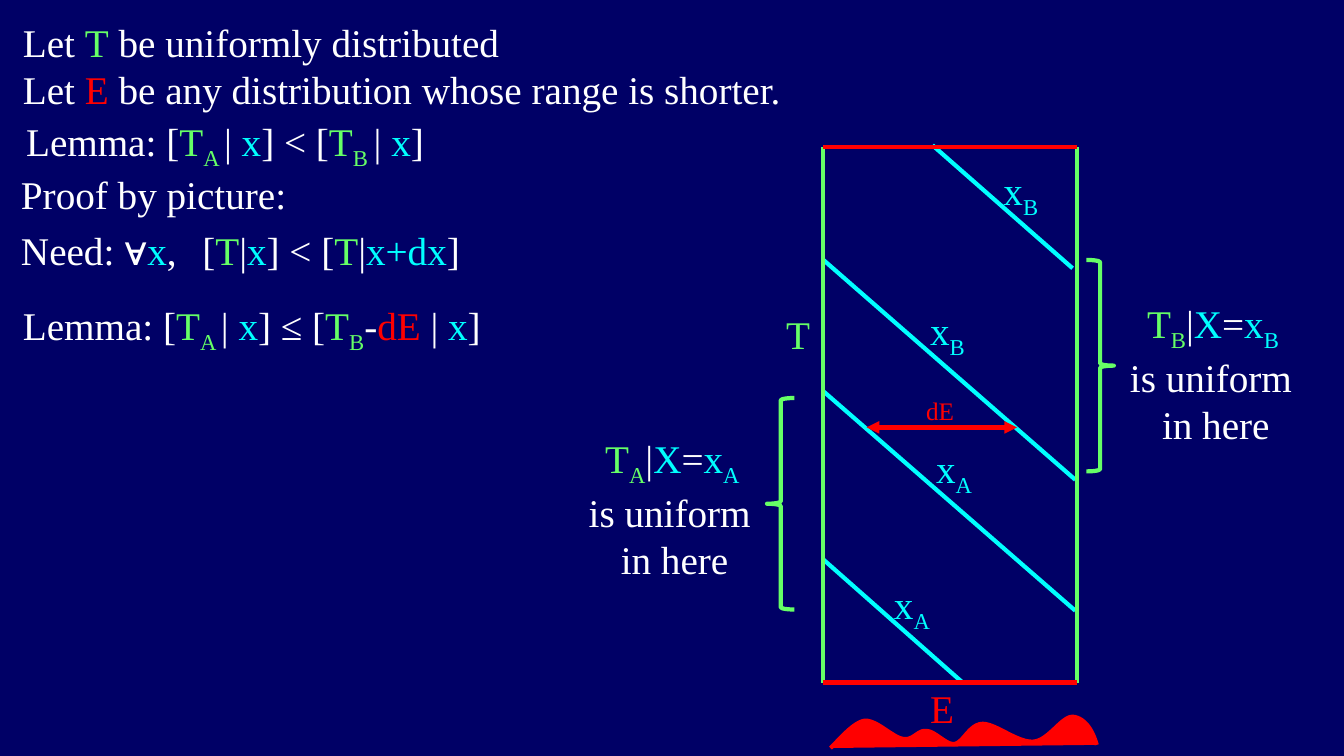
from lxml import etree
from pptx import Presentation
from pptx.dml.color import RGBColor
from pptx.enum.shapes import MSO_CONNECTOR, MSO_SHAPE
from pptx.enum.text import MSO_AUTO_SIZE, PP_ALIGN
from pptx.oxml.ns import qn
from pptx.util import Cm, Pt

WHITE, GREEN, CYAN, RED = "FFFFFF", "66FF66", "00FFFF", "FF0000"
# Marks used in text: {w} {g} {c} {r} set the colour, {_} starts a subscript
MARKS = {"w": WHITE, "g": GREEN, "c": CYAN, "r": RED}


def rgb(value):
    return RGBColor.from_string(value)


class Board:
    font = "Times New Roman"
    size = 28
    weight = 3

    def __init__(self, slide, back):
        self.s = slide
        fill = slide.background.fill
        fill.solid()
        fill.fore_color.rgb = rgb(back)

    def text(self, x, y, w, *lines, size=None, align=PP_ALIGN.LEFT, wrap=True, tab=None):
        size = size or self.size
        height = 0.26 + 1.19 * len(lines) * size / self.size
        tf = self.s.shapes.add_textbox(Cm(x), Cm(y), Cm(w), Cm(height)).text_frame
        tf.word_wrap = wrap
        tf.auto_size = MSO_AUTO_SIZE.SHAPE_TO_FIT_TEXT
        for i, line in enumerate(lines):
            p = tf.add_paragraph() if i else tf.paragraphs[0]
            p.alignment = align
            p.font.name, p.font.size = self.font, Pt(size)
            if tab:
                stops = etree.SubElement(p._p.get_or_add_pPr(), qn("a:tabLst"))
                p._p.pPr.insert(0, stops)
                etree.SubElement(stops, qn("a:tab"), pos=str(Cm(tab)), algn="l")
            self.runs(p, line)

    def runs(self, p, line):
        color = WHITE
        for part in line.split("{")[1:]:
            mark, words = part.split("}")
            color = MARKS.get(mark, color)
            r = p.add_run()
            r.text = words
            r.font.name, r.font.size = p.font.name, p.font.size
            r.font.color.rgb = rgb(color)
            if mark == "_":
                r.font._element.set("baseline", "-25000")

    def line(self, x1, y1, x2, y2, color, arrows=False):
        c = self.s.shapes.add_connector(MSO_CONNECTOR.STRAIGHT, Cm(x1), Cm(y1), Cm(x2), Cm(y2))
        self.outline(c, color)
        etree.SubElement(c._element.spPr, qn("a:effectLst"))
        if arrows:
            for end in ("a:headEnd", "a:tailEnd"):
                etree.SubElement(c.line._get_or_add_ln(), qn(end), type="triangle")

    def brace(self, kind, x, y, w, h, color):
        sp = self.s.shapes.add_shape(kind, Cm(x), Cm(y), Cm(w), Cm(h))
        sp.shadow.inherit = False
        sp.fill.background()
        self.outline(sp, color)

    def hills(self, start, curves, color, steps=12):
        points = []
        x0, y0 = start
        for x1, y1, x2, y2, x3, y3 in curves:
            for k in range(1, steps + 1):
                t = k / steps
                u = 1 - t
                a, b, c, d = u ** 3, 3 * u * u * t, 3 * u * t * t, t ** 3
                points.append((Cm(a * x0 + b * x1 + c * x2 + d * x3),
                               Cm(a * y0 + b * y1 + c * y2 + d * y3)))
            x0, y0 = x3, y3
        builder = self.s.shapes.build_freeform(Cm(start[0]), Cm(start[1]))
        builder.add_line_segments(points, close=False)
        sp = builder.convert_to_shape()
        sp.shadow.inherit = False
        sp.fill.solid()
        sp.fill.fore_color.rgb = rgb(color)
        self.outline(sp, color)

    def outline(self, shape, color):
        shape.line.color.rgb = rgb(color)
        shape.line.width = Pt(self.weight)


def main():
    prs = Presentation()
    prs.slide_width, prs.slide_height = Cm(33.87), Cm(19.05)
    board = Board(prs.slides.add_slide(prs.slide_layouts[6]), "000066")

    # Statements and proof steps
    board.text(0.33, 0.33, 20.78, "{w}Let {g}T{w} be uniformly distributed",
               "{w}Let {r}E{w} be any distribution whose range is shorter.")
    board.text(0.41, 2.84, 11.38, "{w}Lemma: [{g}T{_}A {w}| {c}x{w}] < [{g}T{_}B {w}| {c}x{w}]")
    board.text(0.28, 4.17, 8.66, "{w}Proof by picture:")
    board.text(0.28, 5.59, 27.56,
               "{w}Need: ∀{c}x{w},\t[{g}T{w}|{c}x{w}] < [{g}T{w}|{c}x+dx{w}]", tab=4.57)
    board.text(0.33, 7.47, 12.95,
               "{w}Lemma: [{g}T{_}A {w}| {c}x{w}] ≤ [{g}T{_}B{w}-{r}dE {w}| {c}x{w}]")

    # Diagonals of constant x
    left, right, top, bottom = 20.75, 27.15, 3.71, 17.2
    for ends in ((left, 9.86, 27.1, 15.39), (left, 6.55, 27.1, 12.09),
                 (23.5, 3.66, 27.03, 6.76), (left, 14.1, 24.26, bottom)):
        board.line(*ends, CYAN)

    # Frame: T runs upwards, E runs across
    for x in (left, right):
        board.line(x, top, x, bottom, GREEN)
    for y in (top, bottom):
        board.line(left, y, right, y, RED)
    board.text(19.56, 7.7, 1.57, "{g}T")
    board.text(23.19, 17.12, 1.57, "{r}E")

    # Diagonal labels
    for x, y, name in ((25.04, 4.06, "B"), (23.19, 7.59, "B"),
                       (23.34, 11.07, "A"), (22.28, 14.5, "A")):
        board.text(x, y, 1.9, "{c}x{_}" + name)

    # Horizontal gap dE
    board.line(21.84, 10.77, 25.63, 10.77, RED, arrows=True)
    board.text(23.09, 9.83, 1.22, "{r}dE", size=18, wrap=False)

    # Ranges of T for each x
    for name, x, y, kind, brace_x, brace_y in (
            ("A", 13.94, 10.82, MSO_SHAPE.LEFT_BRACE, 19.33, 10.03),
            ("B", 27.58, 7.42, MSO_SHAPE.RIGHT_BRACE, 27.38, 6.55)):
        board.text(x, y, 6.12, f"{{g}}T{{_}}{name}{{w}}|{{c}}X{{w}}={{c}}x{{_}}{name} ",
                   "{w}is uniform ", "{w}in here", align=PP_ALIGN.CENTER)
        board.brace(kind, brace_x, brace_y, 0.69, 5.33, GREEN)

    # Density of E
    board.hills((20.93, 18.85), (
        (21.11, 18.69, 21.49, 18.21, 21.79, 18.16),
        (22.1, 18.14, 22.5, 18.59, 22.76, 18.62),
        (23.01, 18.67, 23.14, 18.39, 23.34, 18.42),
        (23.57, 18.42, 23.83, 18.77, 24.05, 18.75),
        (24.28, 18.72, 24.43, 18.24, 24.77, 18.24),
        (25.1, 18.24, 25.65, 18.72, 26.04, 18.69),
        (26.42, 18.67, 26.75, 18.06, 27.03, 18.06),
        (27.28, 18.08, 27.51, 18.31, 27.64, 18.77)), RED)

    prs.save("out.pptx")


if __name__ == "__main__":
    main()
